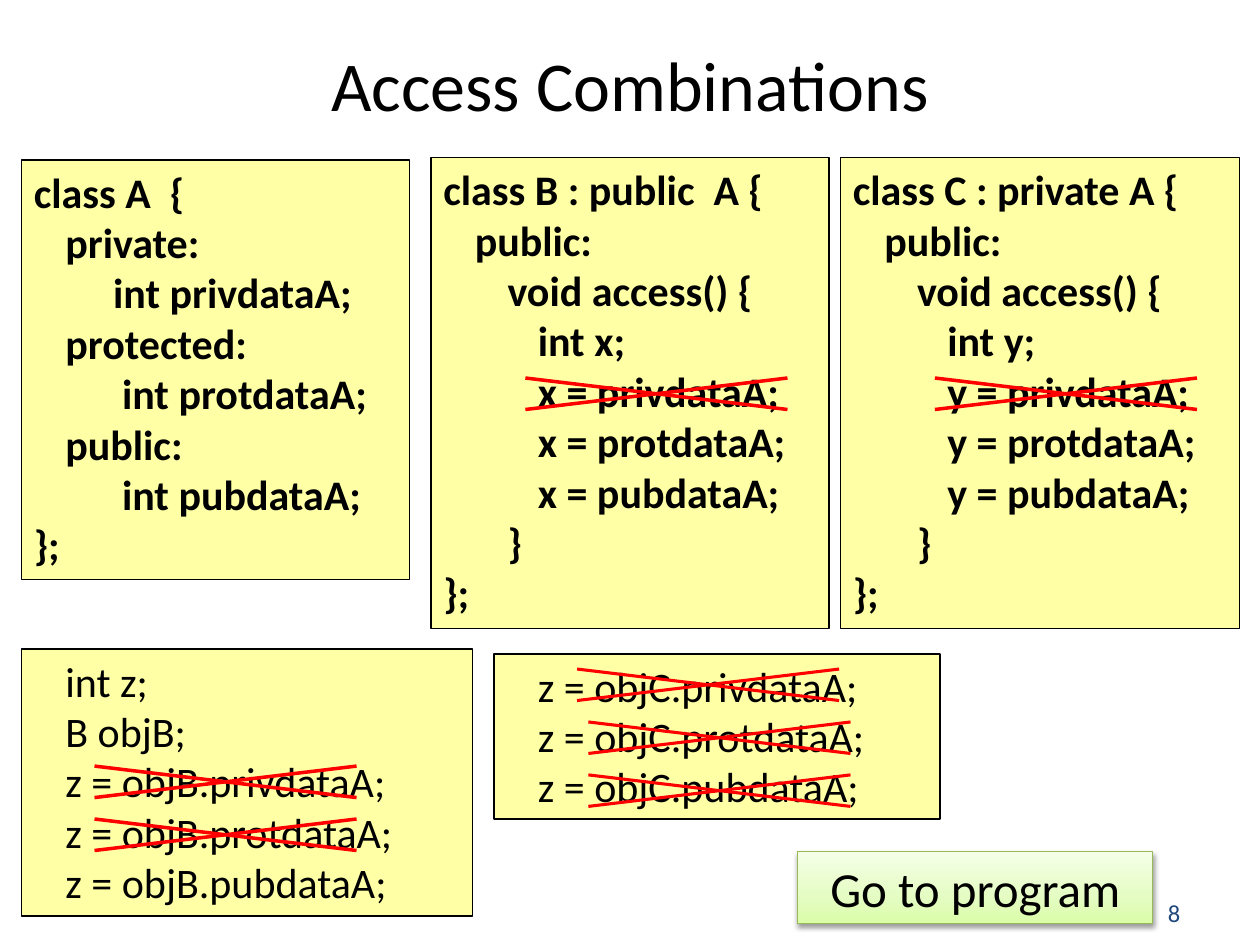
import copy

import lxml.etree
import pptx
import pptx.dml.color
import pptx.enum.shapes
import pptx.enum.text
import pptx.oxml
import pptx.oxml.ns
import pptx.util
from pptx.util import Inches

COLORS = {
    "text": "000000",
    "code_fill": "FFFF00",
    "cross": "FF0000",
    "number": "1F497D",
    "button_line": "98B955",
}
BUTTON_STOPS = [(0, "DAFDA7"), (0.35, "E4FCC2"), (1, "F5FFE7")]
FONT = "Calibri"
CROSS_WIDTH, CROSS_HEIGHT = 2.08, 0.25

# Each code line is (indent in inches, text).
CLASS_A = [
    (0, "class A  {"),
    (0.25, "private:"), (0.63, "int privdataA;"),
    (0.25, "protected:"), (0.7, "int protdataA;"),
    (0.25, "public:"), (0.7, "int pubdataA;"),
    (0, "};"),
]
MEMBERS = ["privdataA", "protdataA", "pubdataA"]


def derived_class(heading, variable):
    return [
        (0, heading), (0.25, "public:"), (0.51, "void access() {"),
        (0.75, f"int {variable};"),
        *[(0.75, f"{variable} = {member};") for member in MEMBERS],
        (0.51, "}"), (0, "};"),
    ]


def object_access(name):
    return [(0.25, f"z = {name}.{member};") for member in MEMBERS]


def rgb(value):
    return pptx.dml.color.RGBColor.from_string(value)


def format_runs(paragraph, size, color=COLORS["text"], bold=False):
    for run in paragraph.runs:
        run.font.name = FONT
        run.font.size = pptx.util.Pt(size)
        run.font.bold = bold
        run.font.color.rgb = rgb(color)


def add_rectangle(slide, box, line_color):
    shape = slide.shapes.add_shape(
        pptx.enum.shapes.MSO_SHAPE.RECTANGLE, *map(Inches, box))
    shape.line.color.rgb = rgb(line_color)
    shape.line.width = pptx.util.Pt(0.75)
    shape.shadow.inherit = False
    shape.text_frame.word_wrap = True
    return shape


def add_title(slide, box, text):
    title = slide.shapes.title
    title.left, title.top, title.width, title.height = map(Inches, box)
    title.text_frame.text = text
    title.text_frame.vertical_anchor = pptx.enum.text.MSO_ANCHOR.MIDDLE
    paragraph = title.text_frame.paragraphs[0]
    paragraph.alignment = pptx.enum.text.PP_ALIGN.CENTER
    format_runs(paragraph, 40)


def add_code_box(slide, box, lines, bold=False):
    shape = add_rectangle(slide, box, COLORS["text"])
    shape.fill.solid()
    shape.fill.fore_color.rgb = rgb(COLORS["code_fill"])
    color = shape.fill._xPr.find(".//" + pptx.oxml.ns.qn("a:srgbClr"))
    lxml.etree.SubElement(color, pptx.oxml.ns.qn("a:alpha"), val="35000")

    frame = shape.text_frame
    frame.vertical_anchor = pptx.enum.text.MSO_ANCHOR.TOP
    frame.auto_size = pptx.enum.text.MSO_AUTO_SIZE.SHAPE_TO_FIT_TEXT
    frame.text = "\n".join(text for _, text in lines)
    for paragraph, (indent, _) in zip(frame.paragraphs, lines):
        paragraph.alignment = pptx.enum.text.PP_ALIGN.LEFT
        paragraph._p.get_or_add_pPr().set("marL", str(Inches(indent)))
        format_runs(paragraph, 24, bold=bold)


def add_cross(slide, left, top, weight):
    group = slide.shapes.add_group_shape()
    right, bottom = left + CROSS_WIDTH, top + CROSS_HEIGHT
    for start, end in ((bottom, top), (top, bottom)):
        line = group.shapes.add_connector(
            pptx.enum.shapes.MSO_CONNECTOR.STRAIGHT,
            *map(Inches, (left, start, right, end)))
        line.line.color.rgb = rgb(COLORS["cross"])
        line.line.width = pptx.util.Pt(weight)
        properties = line._element.spPr
        lxml.etree.SubElement(properties, pptx.oxml.ns.qn("a:effectLst"))


def add_button(slide, box, text):
    shape = add_rectangle(slide, box, COLORS["button_line"])
    # Three-stop gradient, lightest at the top
    shape.fill.gradient()
    shape.fill.gradient_angle = 90
    stop_list = shape._element.spPr.find(".//" + pptx.oxml.ns.qn("a:gsLst"))
    stop_list.append(copy.deepcopy(stop_list[0]))
    for stop, (position, color) in zip(shape.fill.gradient_stops, BUTTON_STOPS):
        stop.position = position
        stop.color.rgb = rgb(color)
    # Soft shadow below
    effects = shape._element.spPr.find(pptx.oxml.ns.qn("a:effectLst"))
    effects.append(pptx.oxml.parse_xml(
        f'<a:outerShdw {pptx.oxml.ns.nsdecls("a")} blurRad="40000" dist="20000" '
        'dir="5400000" rotWithShape="0"><a:srgbClr val="000000">'
        '<a:alpha val="38000"/></a:srgbClr></a:outerShdw>'))

    shape.text_frame.text = text
    shape.text_frame.vertical_anchor = pptx.enum.text.MSO_ANCHOR.MIDDLE
    paragraph = shape.text_frame.paragraphs[0]
    paragraph.alignment = pptx.enum.text.PP_ALIGN.CENTER
    format_runs(paragraph, 28)


def add_slide_number(slide, box, number):
    shape = slide.shapes.add_textbox(*map(Inches, box))
    frame = shape.text_frame
    frame.word_wrap = True
    frame.vertical_anchor = pptx.enum.text.MSO_ANCHOR.MIDDLE
    frame.text = number
    format_runs(frame.paragraphs[0], 14, COLORS["number"])


def main():
    presentation = pptx.Presentation()
    presentation.slide_width = Inches(10)
    presentation.slide_height = Inches(7.5)
    slide = presentation.slides.add_slide(presentation.slide_layouts[5])

    add_slide_number(slide, (9.17, 7.08, 0.67, 0.33), "8")
    add_title(slide, (0.5, 0.25, 9, 0.83), "Access Combinations")

    # Class definitions and the code that uses them
    add_code_box(slide, (0.17, 1.27, 3.08, 3.33), CLASS_A, bold=True)
    add_code_box(slide, (0.17, 5.15, 3.58, 2.12),
                 [(0.25, "int z;"), (0.25, "B objB;"), *object_access("objB")])
    add_code_box(slide, (3.42, 1.25, 3.16, 3.74),
                 derived_class("class B : public  A {", "x"), bold=True)
    add_code_box(slide, (6.67, 1.25, 3.17, 3.74),
                 derived_class("class C : private A {", "y"), bold=True)
    add_code_box(slide, (3.92, 5.19, 3.54, 1.31), object_access("objC"))

    # Crosses over the forbidden accesses
    for left, top in ((4.17, 3), (7.42, 3), (0.75, 6.08), (0.75, 6.5)):
        add_cross(slide, left, top, 2)
    for left, top in ((4.58, 5.31), (4.67, 5.73), (4.67, 6.15)):
        add_cross(slide, left, top, 1.75)

    add_button(slide, (6.33, 6.76, 2.82, 0.57), "Go to program")
    presentation.save("out.pptx")


if __name__ == "__main__":
    main()
